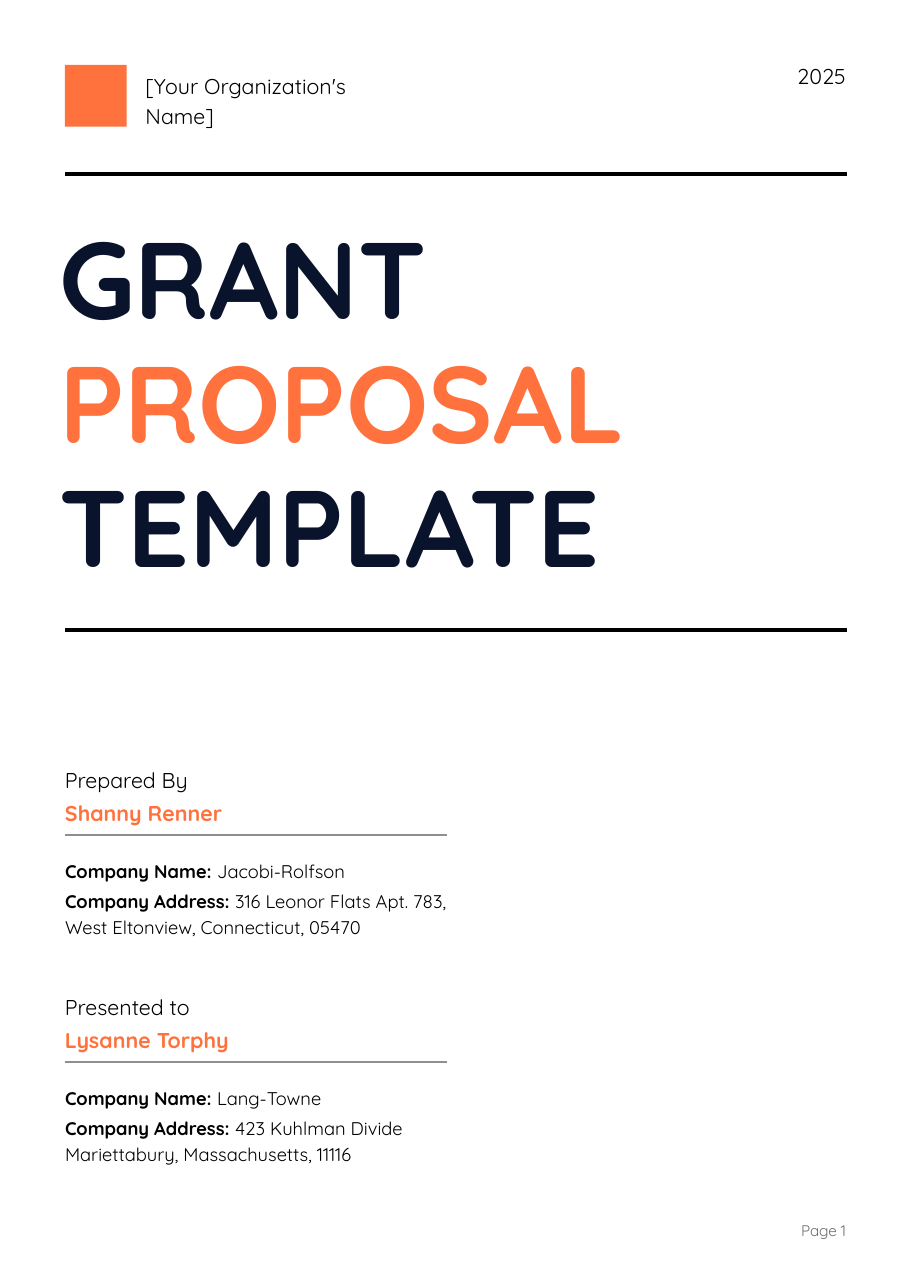
from dataclasses import dataclass

from lxml import etree
from pptx import Presentation
from pptx.dml.color import RGBColor
from pptx.enum.shapes import MSO_CONNECTOR, MSO_SHAPE
from pptx.enum.text import MSO_AUTO_SIZE, PP_ALIGN
from pptx.oxml.ns import qn
from pptx.util import Inches, Pt

STRAIGHT = MSO_CONNECTOR.STRAIGHT
RECTANGLE = MSO_SHAPE.RECTANGLE
FIT_SHAPE = MSO_AUTO_SIZE.SHAPE_TO_FIT_TEXT
LEFT, RIGHT = PP_ALIGN.LEFT, PP_ALIGN.RIGHT


@dataclass(frozen=True)
class Theme:
    font: str = "Quicksand"
    ink: RGBColor = RGBColor(0, 0, 0)
    navy: RGBColor = RGBColor(0x09, 0x13, 0x2B)
    orange: RGBColor = RGBColor(0xFF, 0x72, 0x3D)
    rule_gray: RGBColor = RGBColor(0x8F, 0x8F, 0x8F)
    footer_gray: RGBColor = RGBColor(0x70, 0x6F, 0x6F)
    title_size: int = 71
    label_size: int = 14
    detail_size: int = 12
    footer_size: int = 10


theme = Theme()
MARGIN = 0.59


def add_text(box, lines, size, spacing=1.15, align=LEFT, inset=0.0):
    """Each line is a list of (text, colour, bold) runs and becomes one paragraph."""
    frame = slide.shapes.add_textbox(*map(Inches, box)).text_frame
    frame.word_wrap = True
    frame.auto_size = FIT_SHAPE
    frame.margin_left = frame.margin_right = Inches(inset)
    frame.margin_top = frame.margin_bottom = Inches(inset)
    for index, line in enumerate(lines):
        paragraph = frame.add_paragraph() if index else frame.paragraphs[0]
        paragraph.alignment = align
        paragraph.line_spacing = spacing
        paragraph.font.name = theme.font
        paragraph.font.size = Pt(size)
        for text, color, bold in line:
            run = paragraph.add_run()
            run.text = text
            run.font.color.rgb = color
            run.font.bold = bold


def add_rule(right, y, color, width):
    """Draw a horizontal line from the left margin."""
    rule = slide.shapes.add_connector(
        STRAIGHT, Inches(MARGIN), Inches(y), Inches(right), Inches(y))
    rule.line.color.rgb = color
    rule.line.width = Pt(width)
    etree.SubElement(rule._element.spPr, qn("a:effectLst"))


prs = Presentation()
prs.slide_width, prs.slide_height = Inches(8.27), Inches(11.69)
slide = prs.slides.add_slide(prs.slide_layouts[6])

# Title between two rules
for rule_y in (1.58, 5.72):
    add_rule(7.69, rule_y, theme.ink, 2.25)
title = [("GRANT", theme.navy), ("PROPOSAL", theme.orange), ("TEMPLATE", theme.navy)]
add_text((0.44, 1.9, 6.01, 3.61), [[(word, color, True)] for word, color in title],
         theme.title_size, spacing=0.95, inset=0.1)

# Header: plain square, organization and year
header_square = slide.shapes.add_shape(
    RECTANGLE, Inches(MARGIN), Inches(MARGIN), Inches(0.56), Inches(0.56))
header_square.shadow.inherit = False
header_square.fill.solid()
header_square.fill.fore_color.rgb = theme.orange
header_square.line.fill.background()

add_text((1.32, 0.63, 2.48, 0.51),
         [[("[Your Organization's", theme.ink, False)], [("Name]", theme.ink, False)]],
         theme.label_size)
add_text((6.96, 0.54, 0.72, 0.24), [[("2025", theme.ink, False)]],
         theme.label_size, align=RIGHT)

# Contact blocks
contacts = [
    ("Prepared By", "Shanny Renner", "Jacobi-Rolfson",
     "316 Leonor Flats Apt. 783,", "West Eltonview, Connecticut, 05470"),
    ("Presented to", "Lysanne Torphy", "Lang-Towne",
     "423 Kuhlman Divide", "Mariettabury, Massachusetts, 11116"),
]
CONTACT_TOP, CONTACT_STEP = 6.93, 2.06
for index, (role, person, company, street, city) in enumerate(contacts):
    top = CONTACT_TOP + index * CONTACT_STEP
    add_text((MARGIN, top, 2.26, 0.24), [[(role, theme.ink, False)]], theme.label_size)
    add_text((MARGIN, top + 0.3, 2.26, 0.24), [[(person, theme.orange, True)]],
             theme.label_size)
    add_rule(4.06, top + 0.65, theme.rule_gray, 1.5)
    add_text((MARGIN, top + 0.85, 3.65, 0.2),
             [[("Company Name: ", theme.ink, True), (company, theme.ink, False)]],
             theme.detail_size)
    add_text((MARGIN, top + 1.11, 3.65, 0.44),
             [[("Company Address: ", theme.ink, True), (street, theme.ink, False)],
              [(city, theme.ink, False)]],
             theme.detail_size, spacing=1.2)

# Footer
add_text((6.96, 11.06, 0.72, 0.17), [[("Page 1", theme.footer_gray, False)]],
         theme.footer_size, align=RIGHT)

prs.save("out.pptx")
